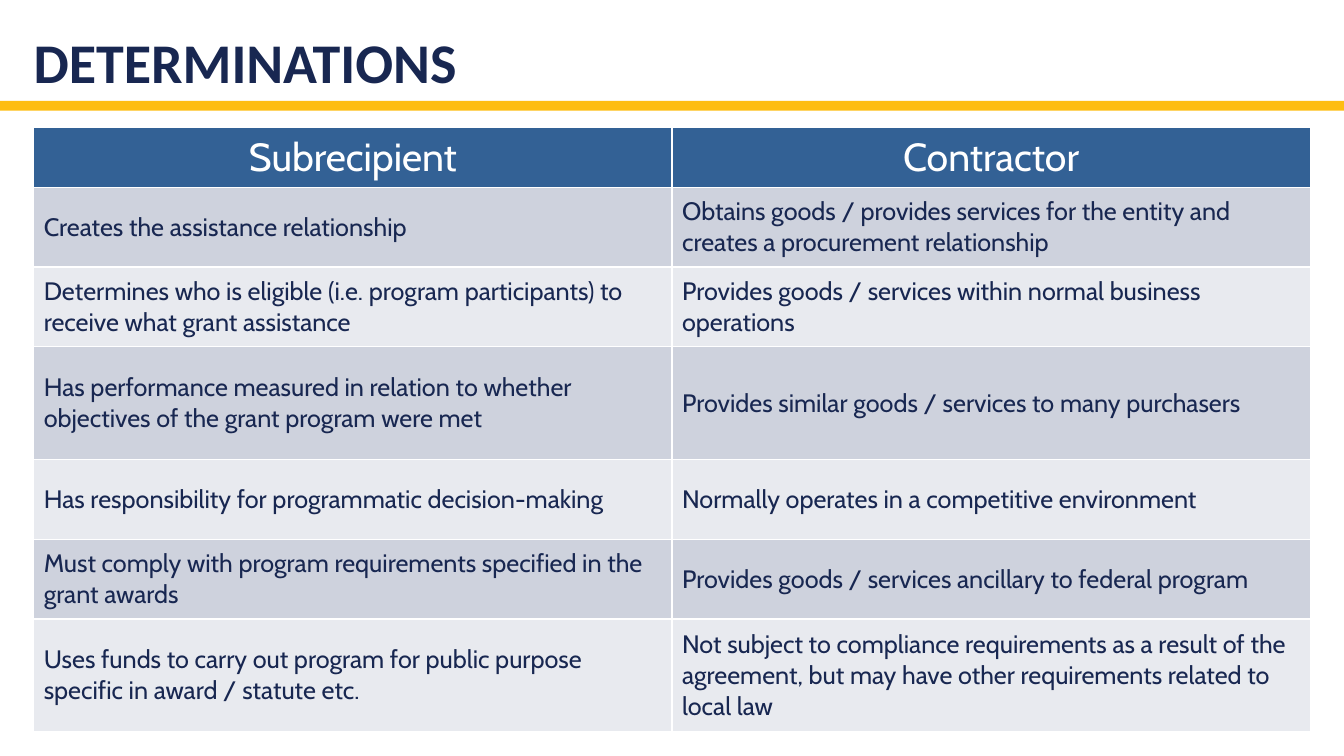
from lxml.etree import SubElement
from pptx import Presentation
from pptx.dml.color import RGBColor
from pptx.enum.shapes import MSO_SHAPE
from pptx.enum.text import MSO_ANCHOR, PP_ALIGN
from pptx.oxml.ns import qn
from pptx.util import Cm, Pt

NAVY = RGBColor(0x18, 0x27, 0x51)
GOLD = RGBColor(0xFE, 0xBD, 0x11)
BLUE = RGBColor(0x33, 0x61, 0x95)
WHITE = RGBColor(0xFF, 0xFF, 0xFF)
BAND_DARK = RGBColor(0xCE, 0xD2, 0xDD)
BAND_LIGHT = RGBColor(0xE8, 0xEA, 0xEF)

MARGIN = Cm(0.85)
CONTENT_WIDTH = Cm(32.17)

ROWS = [
    ("Subrecipient", "Contractor"),
    ("Creates the assistance relationship",
     "Obtains goods / provides services for the entity and creates a procurement relationship"),
    ("Determines who is eligible (i.e. program participants) to receive what grant assistance",
     "Provides goods / services within normal business operations"),
    ("Has performance measured in relation to whether objectives of the grant program were met",
     "Provides similar goods / services to many purchasers"),
    ("Has responsibility for programmatic decision-making",
     "Normally operates in a competitive environment"),
    ("Must comply with program requirements specified in the grant awards",
     "Provides goods / services ancillary to federal program"),
    ("Uses funds to carry out program for public purpose specific in award / statute etc.",
     "Not subject to compliance requirements as a result of the agreement, "
     "but may have other requirements related to local law"),
]
ROW_HEIGHTS = [1.5, 2.01, 2.01, 2.84, 2.01, 2.01, 2.84]


def add_borders(cell):
    properties = cell._tc.get_or_add_tcPr()
    for side in ("lnL", "lnR", "lnT", "lnB"):
        line = SubElement(properties, qn(f"a:{side}"), w=str(Pt(1)))
        fill = SubElement(line, qn("a:solidFill"))
        SubElement(fill, qn("a:srgbClr"), val=str(WHITE))


presentation = Presentation()
presentation.slide_width = Cm(33.87)
presentation.slide_height = Cm(19.05)
slide = presentation.slides.add_slide(presentation.slide_layouts[6])

# Gold rule under the title
rule = slide.shapes.add_shape(MSO_SHAPE.RECTANGLE, 0, Cm(2.54), presentation.slide_width, Cm(0.25))
rule.shadow.inherit = False
rule.fill.solid()
rule.fill.fore_color.rgb = GOLD
rule.line.fill.background()

# Title
title = slide.shapes.add_textbox(MARGIN, 0, CONTENT_WIDTH, Cm(2.54))
frame = title.text_frame
frame.word_wrap = True
frame.vertical_anchor = MSO_ANCHOR.BOTTOM
frame.margin_left = frame.margin_right = 0
paragraph = frame.paragraphs[0]
paragraph.text = "DETERMINATIONS"
paragraph.line_spacing = 0.9
paragraph.font.name = "Calibri"
paragraph.font.size = Pt(40)
paragraph.font.bold = True
paragraph.font.color.rgb = NAVY

# Comparison table
table = slide.shapes.add_table(
    len(ROWS), 2, MARGIN, Cm(3.22), CONTENT_WIDTH, Cm(sum(ROW_HEIGHTS))).table
for row_index, (texts, height) in enumerate(zip(ROWS, ROW_HEIGHTS)):
    table.rows[row_index].height = Cm(height)
    is_header = row_index == 0
    band = BAND_DARK if row_index % 2 else BAND_LIGHT
    for column_index, text in enumerate(texts):
        cell = table.cell(row_index, column_index)
        add_borders(cell)
        cell.fill.solid()
        cell.fill.fore_color.rgb = BLUE if is_header else band
        cell.vertical_anchor = MSO_ANCHOR.MIDDLE
        paragraph = cell.text_frame.paragraphs[0]
        paragraph.text = text
        paragraph.alignment = PP_ALIGN.CENTER if is_header else PP_ALIGN.LEFT
        paragraph.font.name = "Cabin"
        paragraph.font.size = Pt(28 if is_header else 18)
        paragraph.font.bold = False
        paragraph.font.color.rgb = WHITE if is_header else NAVY

presentation.save("out.pptx")
